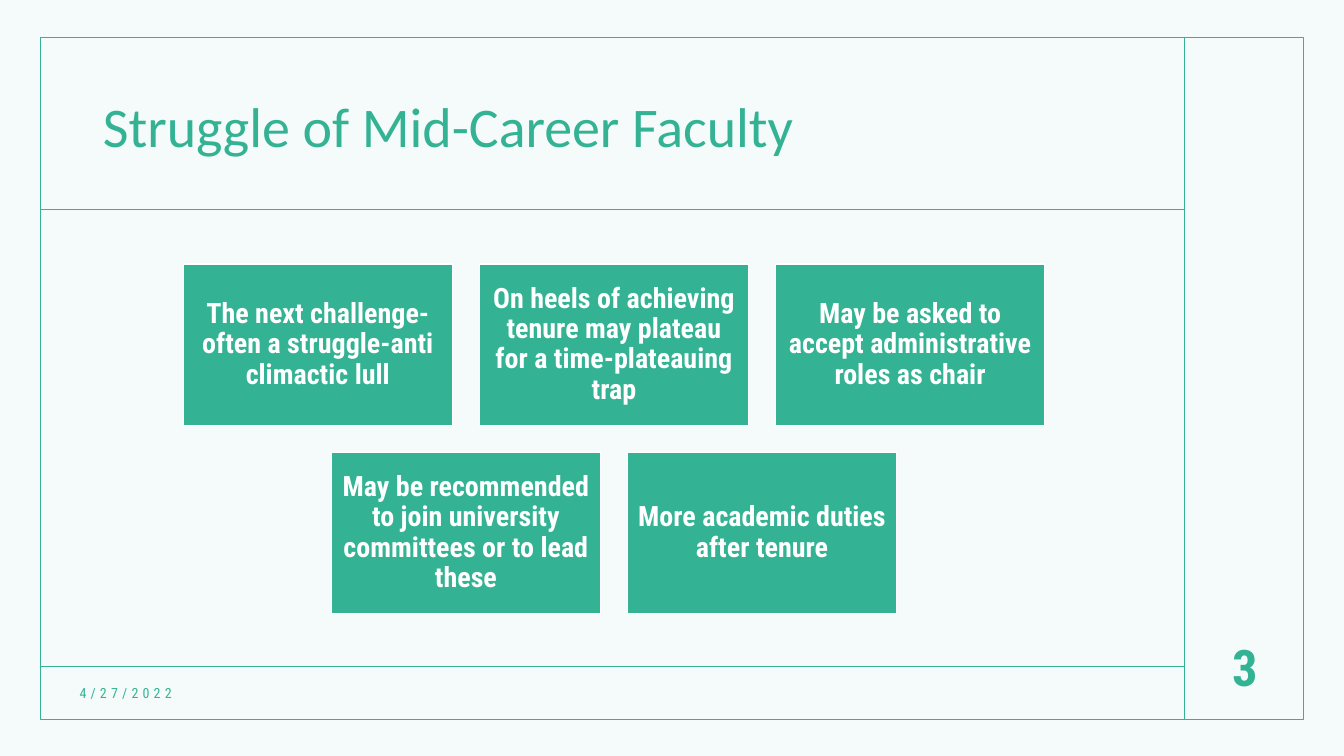
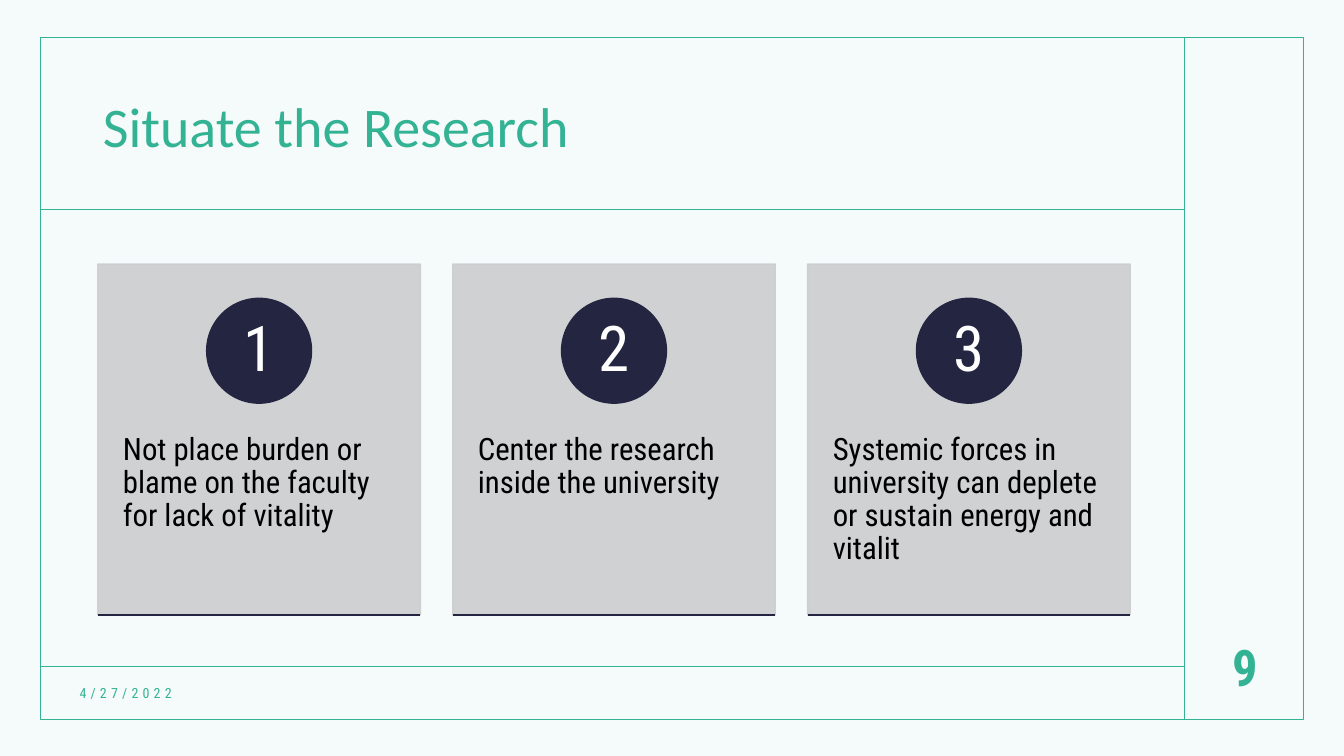
from pptx import Presentation
from pptx import util as u
from pptx.dml.color import RGBColor
from pptx.enum import shapes, text
from pptx.oxml.ns import qn
from lxml import etree

# Content
DATE = "4/27/2022"
STRUGGLES = {
    "title": "Struggle of Mid-Career Faculty",
    "number": 3,
    "rows": [
        ["The next challenge-often a struggle-anti climactic lull",
         "On heels of achieving tenure may plateau for a time-plateauing trap",
         "May be asked to accept administrative roles as chair"],
        ["May be recommended to join university committees or to lead these",
         "More academic duties after tenure"],
    ],
}
RESEARCH = {
    "title": "Situate the Research",
    "number": 9,
    "points": ["Not place burden or blame on the faculty for lack of vitality",
               "Center the research inside the university",
               "Systemic forces in university can deplete or sustain energy and vitalit"],
}

# Shared look, lengths in inches
GREEN = RGBColor(0x34, 0xB3, 0x94)
PALE = RGBColor(0xF5, 0xFB, 0xFA)
WHITE = RGBColor(0xFF, 0xFF, 0xFF)
BLACK = RGBColor(0, 0, 0)
NAVY = RGBColor(0x24, 0x25, 0x41)
GREY = RGBColor(0xCD, 0xCD, 0xCF)
TITLE_FONT, BODY_FONT = "Calibri", "Roboto Condensed"
WIDTH, HEIGHT = 13.33, 7.5
FRAME = (0.4, 0.37, 12.53, 6.77)
SIDE_X, TITLE_RULE, FOOTER_RULE = 11.75, 2.08, 6.61
BODY_CENTER, BODY_TOP = 6.09, 2.62
GAP_SHARE = 0.1  # gap between boxes, as a share of their width
LEFT, CENTER = text.PP_ALIGN.LEFT, text.PP_ALIGN.CENTER
TOP, MIDDLE = text.MSO_ANCHOR.TOP, text.MSO_ANCHOR.MIDDLE
RECT, OVAL = shapes.MSO_SHAPE.RECTANGLE, shapes.MSO_SHAPE.OVAL


def inches(*lengths):
    return [u.Inches(length) for length in lengths]


def write(shape, words, size, color, font=BODY_FONT, bold=False, align=LEFT,
          anchor=MIDDLE, insets=(0.1, 0.05, 0.1, 0.05), line=1.0, spacing=0):
    frame = shape.text_frame
    frame.word_wrap = True
    frame.auto_size = text.MSO_AUTO_SIZE.NONE
    frame.vertical_anchor = anchor
    (frame.margin_left, frame.margin_top,
     frame.margin_right, frame.margin_bottom) = inches(*insets)
    paragraph = frame.paragraphs[0]
    paragraph.alignment, paragraph.line_spacing = align, line
    run = paragraph.add_run()
    run.text = words
    run.font.name, run.font.size, run.font.bold = font, u.Pt(size), bold
    run.font.color.rgb = color
    if spacing:
        run.font._element.set("spc", str(spacing * 100))


def add_box(slide, box, fill=None, line=None, kind=RECT, opacity=100):
    shape = slide.shapes.add_shape(kind, *inches(*box))
    shape.shadow.inherit = False
    if fill is None:
        shape.fill.background()
    else:
        shape.fill.solid()
        shape.fill.fore_color.rgb = fill
    if line is None:
        shape.line.fill.background()
    else:
        shape.line.color.rgb, shape.line.width = line, u.Pt(1)
    if opacity < 100:
        for color in shape._element.spPr.iter(qn("a:srgbClr")):
            etree.SubElement(color, qn("a:alpha"), val=str(opacity * 1000))
    return shape


def add_rule(slide, x1, y1, x2, y2, color=GREEN):
    rule = slide.shapes.add_connector(shapes.MSO_CONNECTOR.STRAIGHT, *inches(x1, y1, x2, y2))
    rule.line.color.rgb, rule.line.width = color, u.Pt(1)
    etree.SubElement(rule._element.spPr, qn("a:effectLst"))


def centered_lefts(count, width):
    """Left edges of equal boxes, centred on the body area."""
    step = width * (1 + GAP_SHARE)
    first = BODY_CENTER - ((count - 1) * step + width) / 2
    return [first + i * step for i in range(count)]


def start_slide(prs, content):
    """Title, frame, rules, date and page number."""
    slide = prs.slides.add_slide(prs.slide_layouts[5])
    left, top, width, height = FRAME
    add_box(slide, FRAME, line=GREEN)
    title = slide.shapes.title
    title.left, title.top, title.width, title.height = inches(0.92, 0.6, 10.42, 1.36)
    write(title, content["title"], 40, GREEN, font=TITLE_FONT, line=0.9)
    add_rule(slide, SIDE_X, top, SIDE_X, top + height)
    for y in (TITLE_RULE, FOOTER_RULE):
        add_rule(slide, left, y, SIDE_X, y)
    date = slide.shapes.add_textbox(*inches(0.69, 6.72, 3.45, 0.31))
    write(date, DATE, 10, GREEN, spacing=3)
    number = slide.shapes.add_textbox(*inches(11.83, 6.2, 1.04, 0.83))
    write(number, str(content["number"]), 36, GREEN, bold=True, align=CENTER)
    return slide


def build_struggles(prs):
    slide = start_slide(prs, STRUGGLES)
    width, height = 2.67, 1.6
    for i, row in enumerate(STRUGGLES["rows"]):
        top = BODY_TOP + i * (height + width * GAP_SHARE)
        for left, struggle in zip(centered_lefts(len(row), width), row):
            tile = add_box(slide, (left, top, width, height), GREEN, WHITE)
            write(tile, struggle, 20, WHITE, bold=True, align=CENTER,
                  insets=(0.08,) * 4, line=0.9)


def build_research(prs):
    slide = start_slide(prs, RESEARCH)
    points = RESEARCH["points"]
    width, height, badge_size = 3.2, 3.48, 1.04
    bottom = BODY_TOP + height
    for i, left in enumerate(centered_lefts(len(points), width)):
        card = add_box(slide, (left, BODY_TOP, width, height), GREY, GREY, opacity=90)
        write(card, points[i], 22, BLACK, anchor=TOP,
              insets=(0.25, 1.68, 0.25, 0.36), line=0.9)
        badge_left = left + (width - badge_size) / 2
        badge = add_box(slide, (badge_left, 2.96, badge_size, badge_size), NAVY, NAVY, OVAL)
        write(badge, str(i + 1), 45, WHITE, align=CENTER,
              insets=(0.08, 0.01, 0.08, 0.01), line=0.9)
        add_rule(slide, left, bottom, left + width, bottom, NAVY)


def main():
    prs = Presentation()
    prs.slide_width, prs.slide_height = inches(WIDTH, HEIGHT)
    backdrop = prs.slide_master.background.fill
    backdrop.solid()
    backdrop.fore_color.rgb = PALE
    build_struggles(prs)
    build_research(prs)
    prs.save("out.pptx")


if __name__ == "__main__":
    main()
